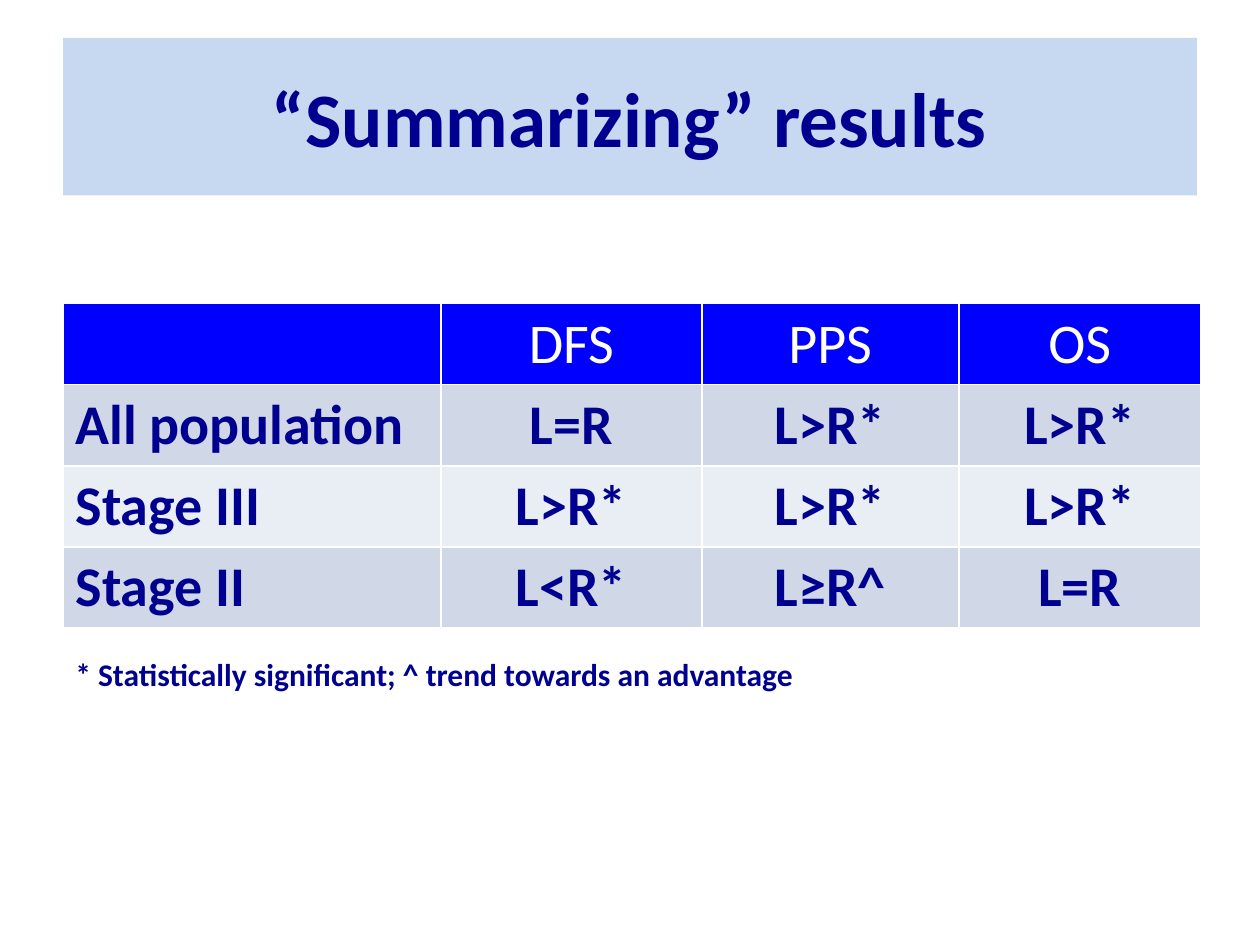
from pptx import Presentation
from pptx.dml.color import RGBColor
from pptx.enum import text
from pptx.util import Inches, Pt

TITLE = "“Summarizing” results"
ROWS = [
    ("", "DFS", "PPS", "OS"),
    ("All population", "L=R", "L>R*", "L>R*"),
    ("Stage III", "L>R*", "L>R*", "L>R*"),
    ("Stage II", "L<R*", "L≥R^", "L=R"),
]
FOOTNOTE = "* Statistically significant; ^ trend towards an advantage"

COLORS = {
    "navy": "000090",
    "title_fill": "C6D9F1",
    "header_fill": "0000FF",
    "header_text": "FFFFFF",
    "odd_row": "D0D8E8",
    "even_row": "E9EDF4",
}
LEFT = 0.5
COLUMN_WIDTHS = (3, 2.07, 2.04, 1.92)
ROW_HEIGHT = 0.63


def color(name):
    return RGBColor.from_string(COLORS[name])


def fill_solid(target, name):
    target.fill.solid()
    target.fill.fore_color.rgb = color(name)


def format_paragraph(paragraph, size, color_name="navy", bold=True, centered=False):
    paragraph.alignment = text.PP_ALIGN.CENTER if centered else text.PP_ALIGN.LEFT
    font = paragraph.font
    font.name = "Calibri"
    font.size = Pt(size)
    font.bold = bold
    font.color.rgb = color(color_name)


def add_title(slide):
    title = slide.shapes.title
    title.left, title.top = Inches(LEFT), Inches(0.3)
    title.width, title.height = Inches(9), Inches(1.25)
    fill_solid(title, "title_fill")
    title.text_frame.text = TITLE
    title.text_frame.vertical_anchor = text.MSO_ANCHOR.MIDDLE
    format_paragraph(title.text_frame.paragraphs[0], 44, centered=True)


def add_results_table(slide):
    table = slide.shapes.add_table(
        len(ROWS), len(COLUMN_WIDTHS), Inches(LEFT), Inches(2.41),
        Inches(sum(COLUMN_WIDTHS)), Inches(ROW_HEIGHT * len(ROWS))).table
    for column, width in zip(table.columns, COLUMN_WIDTHS):
        column.width = Inches(width)
    for row_index, values in enumerate(ROWS):
        is_header = row_index == 0
        if is_header:
            fill_name = "header_fill"
        else:
            fill_name = "odd_row" if row_index % 2 else "even_row"
        for column_index, value in enumerate(values):
            cell = table.cell(row_index, column_index)
            cell.text = value
            fill_solid(cell, fill_name)
            format_paragraph(
                cell.text_frame.paragraphs[0], 32,
                "header_text" if is_header else "navy",
                bold=not is_header, centered=column_index > 0)


def add_footnote(slide):
    footnote = slide.shapes.add_textbox(
        Inches(LEFT), Inches(5.15), Inches(6.27), Inches(0.4))
    frame = footnote.text_frame
    frame.word_wrap = True
    frame.auto_size = text.MSO_AUTO_SIZE.SHAPE_TO_FIT_TEXT
    frame.text = FOOTNOTE
    format_paragraph(frame.paragraphs[0], 18)


def main():
    presentation = Presentation()
    presentation.slide_width, presentation.slide_height = Inches(10), Inches(7.5)
    slide = presentation.slides.add_slide(presentation.slide_layouts[5])
    add_title(slide)
    add_results_table(slide)
    add_footnote(slide)
    presentation.save("out.pptx")


if __name__ == "__main__":
    main()
